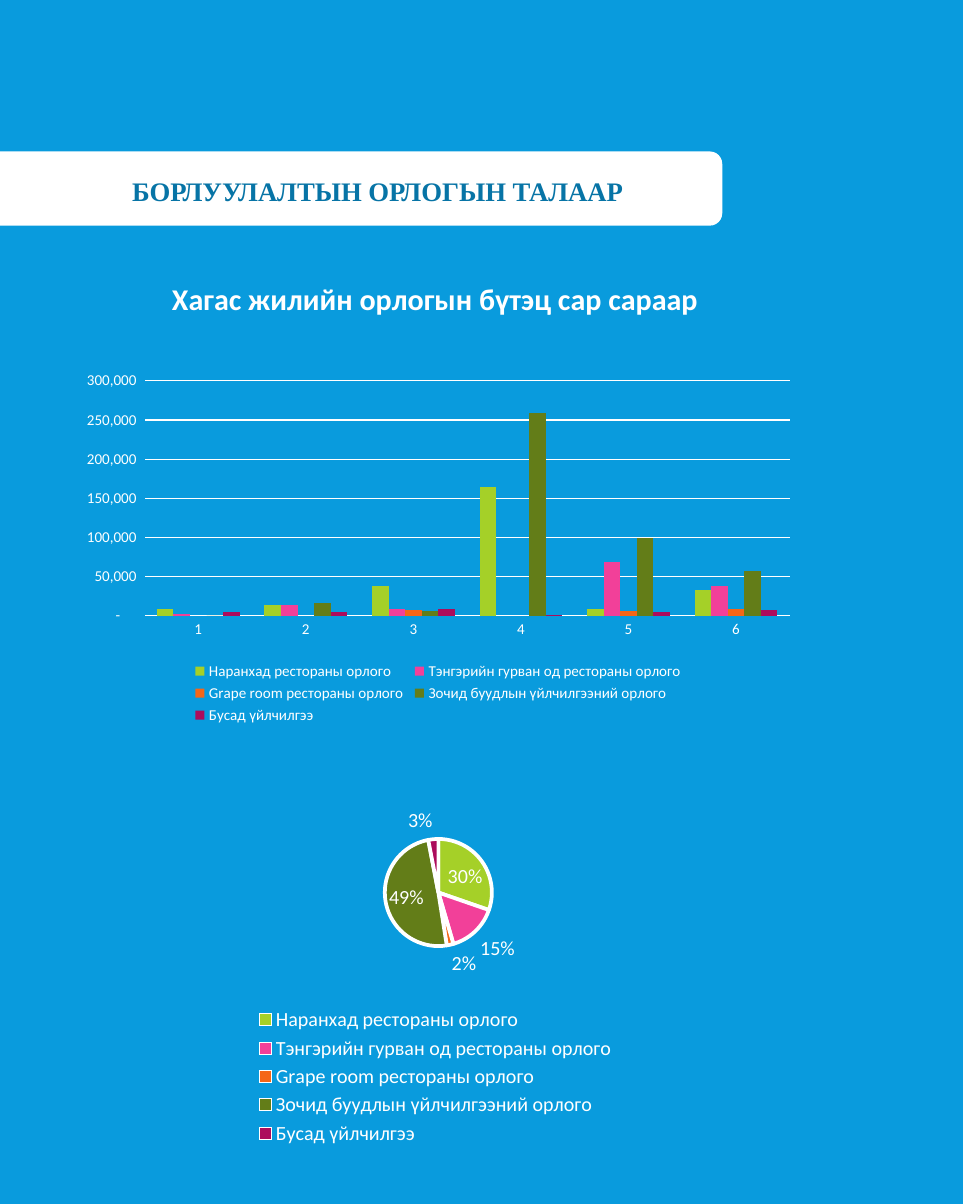
from lxml.etree import SubElement
from pptx import Presentation
from pptx.chart.data import CategoryChartData
from pptx.dml.color import RGBColor
from pptx.enum.chart import XL_CHART_TYPE, XL_LABEL_POSITION, XL_LEGEND_POSITION, XL_TICK_MARK
from pptx.enum.shapes import MSO_SHAPE
from pptx.oxml.ns import qn
from pptx.util import Emu, Pt

WHITE = RGBColor(0xFF, 0xFF, 0xFF)
BLUE = RGBColor(0x09, 0x9B, 0xDD)
NAVY = RGBColor(0x07, 0x74, 0xA6)
LIME = RGBColor(0xA5, 0xD0, 0x28)
PINK = RGBColor(0xF2, 0x40, 0x99)
ORANGE = RGBColor(0xF5, 0x66, 0x17)
OLIVE = RGBColor(0x63, 0x7D, 0x18)
WINE = RGBColor(0xAC, 0x0C, 0x5C)
MONEY = r'_(* #,##0_);_(* \(#,##0\);_(* "-"??_);_('

INCOME = [
    ("Наранхад рестораны орлого", LIME, 30, [8000, 14000, 38000, 164000, 9000, 33000]),
    ("Тэнгэрийн гурван од рестораны орлого", PINK, 15, [2000, 14000, 9000, None, 69000, 38000]),
    ("Grape room рестораны орлого", ORANGE, 2, [None, None, 7000, None, 6000, 8000]),
    ("Зочид буудлын үйлчилгээний орлого", OLIVE, 49, [0, 16000, 6000, 259000, 99000, 57000]),
    ("Бусад үйлчилгээ", WINE, 3, [4000, 4000, 8000, 1000, 5000, 7000]),
]
NAMES, COLORS, SHARES, MONTHS = zip(*INCOME)


def px(*sizes):
    return [Emu(size * 7620) for size in sizes]


def style(font, size, color=WHITE, face="Calibri", bold=False):
    font.size, font.name, font.bold = Pt(size), face, bold
    font.color.rgb = color


def write(frame, text, spacing=None, **look):
    para = frame.paragraphs[0]
    if spacing:
        para.line_spacing = spacing
    run = para.add_run()
    run.text = text
    style(run.font, **look)


def place(part, spots, inner=False):
    for old in part.findall(qn("c:layout")):
        part.remove(old)
    layout = SubElement(part, qn("c:layout"))
    part.insert(0 if inner else 1, layout)
    manual = SubElement(layout, qn("c:manualLayout"))
    if inner:
        SubElement(manual, qn("c:layoutTarget")).set("val", "inner")
    for axis in "xy":
        SubElement(manual, qn(f"c:{axis}Mode")).set("val", "edge")
    for key, spot in zip("xywh", spots):
        SubElement(manual, qn(f"c:{key}")).set("val", str(spot))


class Page:
    def __init__(self, wide, high, color):
        self.deck = Presentation()
        self.deck.slide_width, self.deck.slide_height = px(wide, high)
        self.slide = self.deck.slides.add_slide(self.deck.slide_layouts[6])
        self.slide.background.fill.solid()
        self.slide.background.fill.fore_color.rgb = color
        self.shapes = self.slide.shapes

    def band(self, box, color):
        band = self.shapes.add_shape(MSO_SHAPE.ROUND_2_SAME_RECTANGLE, *px(*box))
        band.rotation = 90
        band.shadow.inherit = False
        band.fill.solid()
        band.fill.fore_color.rgb = color
        band.line.fill.background()

    def text(self, box, text, **look):
        frame = self.shapes.add_textbox(*px(*box)).text_frame
        frame.word_wrap = True
        write(frame, text, **look)

    def chart(self, kind, box, cats, series, size, plot, key):
        data = CategoryChartData()
        data.categories = cats
        for name, values in series:
            data.add_series(name, values)
        chart = self.shapes.add_chart(kind, *px(*box), data).chart
        style(chart.font, 10)
        chart.has_title = False
        chart.has_legend = True
        chart.legend.position = XL_LEGEND_POSITION.BOTTOM
        chart.legend.include_in_layout = False
        style(chart.legend.font, size)
        place(chart.element.xpath(".//c:plotArea")[0], plot, inner=True)
        place(chart.element.xpath(".//c:legend")[0], key)
        return chart

    def pie(self, box, cats, values, colors, **spots):
        chart = self.chart(XL_CHART_TYPE.PIE, box, cats, [("Series 1", values)], 12, **spots)
        plot = chart.plots[0]
        plot.vary_by_categories = True
        for index, color in enumerate(colors):
            form = plot.series[0].points[index].format
            form.fill.solid()
            form.fill.fore_color.rgb = color
            form.line.color.rgb = WHITE
            form.line.width = Pt(2.25)
        plot.has_data_labels = True
        labels = plot.data_labels
        labels.show_percentage, labels.show_value = True, False
        labels.number_format, labels.number_format_is_linked = "0%", False
        labels.position = XL_LABEL_POSITION.BEST_FIT
        style(labels.font, 12)

    def bars(self, box, title, cats, series, colors, head, **spots):
        chart = self.chart(XL_CHART_TYPE.COLUMN_CLUSTERED, box, cats, series, 9, **spots)
        plot = chart.plots[0]
        plot.vary_by_categories = False
        plot.gap_width, plot.overlap = 150, 0
        for item, color in zip(plot.series, colors):
            item.format.fill.solid()
            item.format.fill.fore_color.rgb = color
        for axis in (chart.category_axis, chart.value_axis):
            axis.major_tick_mark = axis.minor_tick_mark = XL_TICK_MARK.NONE
            axis.format.line.fill.background()
            style(axis.tick_labels.font, 9)
        axis = chart.value_axis
        axis.minimum_scale, axis.maximum_scale, axis.major_unit = 0, 300000, 50000
        axis.tick_labels.number_format = MONEY
        axis.tick_labels.number_format_is_linked = False
        axis.major_gridlines.format.line.color.rgb = WHITE
        axis.major_gridlines.format.line.width = Pt(0.75)
        chart.has_title = True
        write(chart.chart_title.text_frame, title, size=18, bold=True)
        place(chart.element.xpath("./c:chart/c:title")[0], head)


def main():
    page = Page(960, 1200, BLUE)
    page.band((323, -172, 74, 720), WHITE)
    page.pie((137, 790, 600, 356), NAMES, SHARES, COLORS,
             plot=(0.41, 0.13, 0.18, 0.3), key=(0.2, 0.59, 0.59, 0.41))
    page.text((120, 173, 533, 68), "БОРЛУУЛАЛТЫН ОРЛОГЫН ТАЛААР", spacing=0.85,
              size=16, color=NAVY, face="Times New Roman", bold=True)
    page.bars((71, 258, 731, 468), "Хагас жилийн орлогын бүтэц сар сараар",
              [str(month) for month in range(1, 7)], zip(NAMES, MONTHS), COLORS,
              head=(0.13, 0.03), plot=(0.1, 0.26, 0.88, 0.5), key=(0.16, 0.85, 0.68, 0.15))
    page.deck.save("out.pptx")


if __name__ == "__main__":
    main()
